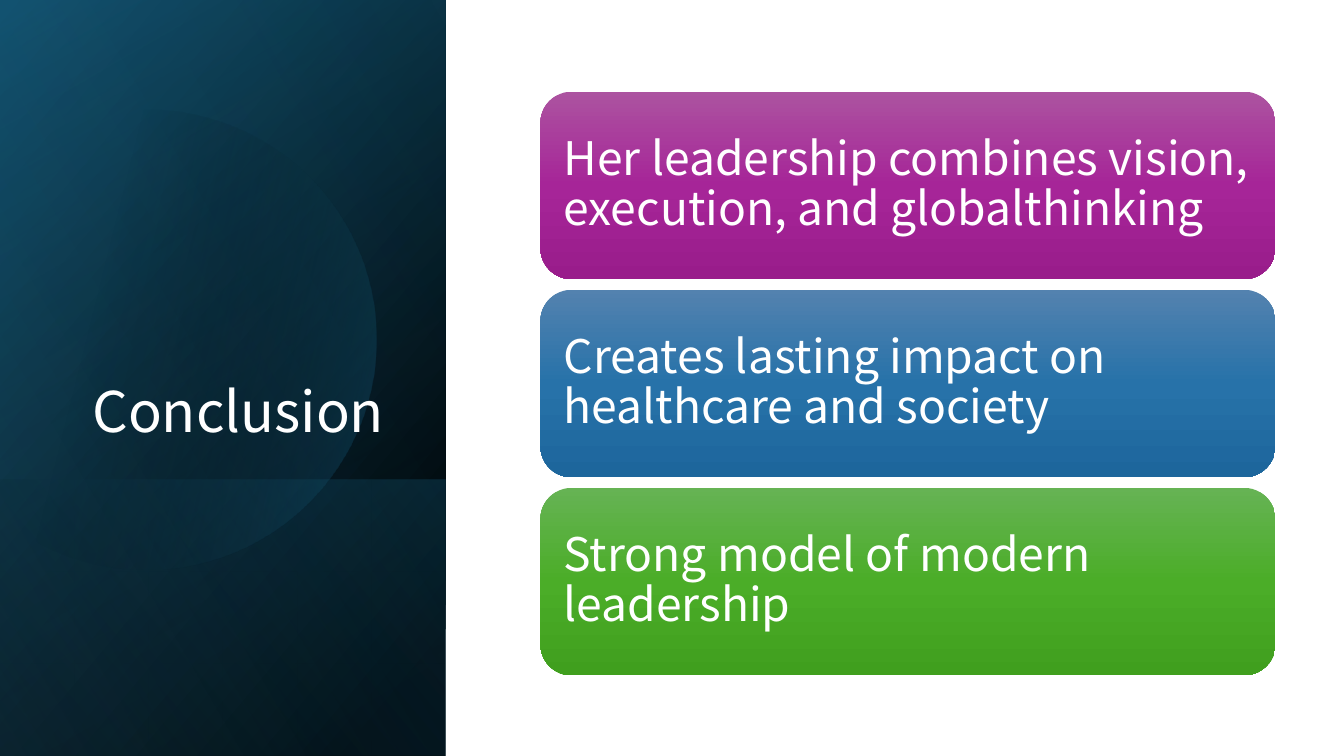
"""Build the conclusion slide: a dark title panel beside three gradient cards."""
import math
from lxml import etree
from pptx import Presentation
from pptx.dml.color import RGBColor
from pptx.enum.shapes import MSO_SHAPE
from pptx.enum.text import MSO_ANCHOR, PP_ALIGN
from pptx.oxml.ns import qn
from pptx.util import Inches, Pt

RECT, ROUNDED = MSO_SHAPE.RECTANGLE, MSO_SHAPE.ROUNDED_RECTANGLE
MIDDLE, BOTTOM = MSO_ANCHOR.MIDDLE, MSO_ANCHOR.BOTTOM
LEFT, RIGHT = PP_ALIGN.LEFT, PP_ALIGN.RIGHT
FONT = "Noto Sans CJK JP"
COLORS = {
    "white": "FFFFFF", "black": "000000", "navy": "104862",
    "teal": "156082", "sky": "46B1E1",
}
TITLE = "Conclusion"
CARDS = [
    ("Her leadership combines vision, execution, and globalthinking",
     ("AC53A0", "A62598", "991C8B")),
    ("Creates lasting impact on healthcare and society",
     ("5382AF", "2772A9", "1D669C")),
    ("Strong model of modern leadership",
     ("66B354", "4BAD28", "409F1E")),
]
SLIDE_W, SLIDE_H = 13.33, 7.5
PANEL_W, BAND_TOP = 4.42, 4.76
CARD_X, CARD_Y, CARD_W, CARD_H, CARD_STEP = 5.36, 0.91, 7.29, 1.86, 1.965
DISC_X, DISC_Y, DISC_R = 1.45, 3.37, 2.28

BASE = ([(8, "black", 100), (100, "navy", 100)], 220)
GLOW = ([(0, "black", 0), (99, "teal", 46)], 240)
BAND = ([(2, "teal", 29), (100, "black", 30)], 140)
DISC = ([(29, "black", 0), (100, "teal", 43)], 14)
SHEEN = ([(0, "black", 0), (99, "sky", 11)], 150)


def paint(shape, stops, angle):
    """Fill a shape with a linear gradient of (position, colour, opacity) stops."""
    shape.shadow.inherit = False
    shape.line.fill.background()
    shape.fill.gradient()
    grad = shape._element.spPr.find(qn("a:gradFill"))
    for child in list(grad):
        grad.remove(child)
    stop_list = etree.SubElement(grad, qn("a:gsLst"))
    for position, color, opacity in stops:
        stop = etree.SubElement(stop_list, qn("a:gs"), pos=str(position * 1000))
        rgb = etree.SubElement(stop, qn("a:srgbClr"), val=COLORS.get(color, color))
        if opacity < 100:
            etree.SubElement(rgb, qn("a:alpha"), val=str(opacity * 1000))
    etree.SubElement(grad, qn("a:lin"), ang=str(angle * 60000), scaled="0")


def add_block(s, kind, x, y, w, h, stops, angle):
    """Add a gradient-filled preset shape."""
    shape = s.shapes.add_shape(kind, Inches(x), Inches(y), Inches(w), Inches(h))
    paint(shape, stops, angle)
    return shape


def add_disc(s):
    """Add the disc that the left slide edge cuts off."""
    limit = math.acos(-DISC_X / DISC_R)
    angles = [limit * (i / 60 - 1) for i in range(121)]
    points = [(Inches(max(0, DISC_X + DISC_R * math.cos(a))),
               Inches(DISC_Y + DISC_R * math.sin(a))) for a in angles]
    builder = s.shapes.build_freeform(*points[0])
    builder.add_line_segments(points[1:], close=True)
    paint(builder.convert_to_shape(), *DISC)


def write(shape, text, size, align, anchor):
    """Set and format the text of a shape."""
    tf = shape.text_frame
    tf.text = text
    tf.word_wrap = True
    tf.vertical_anchor = anchor
    p = tf.paragraphs[0]
    p.alignment = align
    p.line_spacing = 0.9
    font = p.runs[0].font
    font.name = FONT
    font.size = Pt(size)
    font.color.rgb = RGBColor.from_string(COLORS["white"])
    return tf


def main():
    """Create and save the slide."""
    prs = Presentation()
    prs.slide_width, prs.slide_height = Inches(SLIDE_W), Inches(SLIDE_H)
    s = prs.slides.add_slide(prs.slide_layouts[5])

    for layer in (BASE, GLOW):
        add_block(s, RECT, 0, 0, PANEL_W, SLIDE_H, *layer)
    add_block(s, RECT, 0, BAND_TOP, PANEL_W, SLIDE_H - BAND_TOP, *BAND)
    add_disc(s)
    add_block(s, RECT, 0, 0, PANEL_W, SLIDE_H, *SHEEN)

    title = s.shapes.title
    title.left, title.top = Inches(0.31), Inches(1.87)
    title.width, title.height = Inches(3.74), Inches(2.59)
    tf = write(title, TITLE, 40, RIGHT, BOTTOM)
    tf.margin_right = Inches(0.24)
    s.shapes._spTree.append(title._element)

    for i, (text, shades) in enumerate(CARDS):
        stops = [(50 * j, shade, 100) for j, shade in enumerate(shades)]
        card = add_block(s, ROUNDED, CARD_X, CARD_Y + i * CARD_STEP,
                         CARD_W, CARD_H, stops, 90)
        tf = write(card, text, 33, LEFT, MIDDLE)
        tf.margin_left = tf.margin_right = Inches(0.14)
        tf.paragraphs[0].space_after = Pt(11.5)

    prs.save("out.pptx")


if __name__ == "__main__":
    main()
